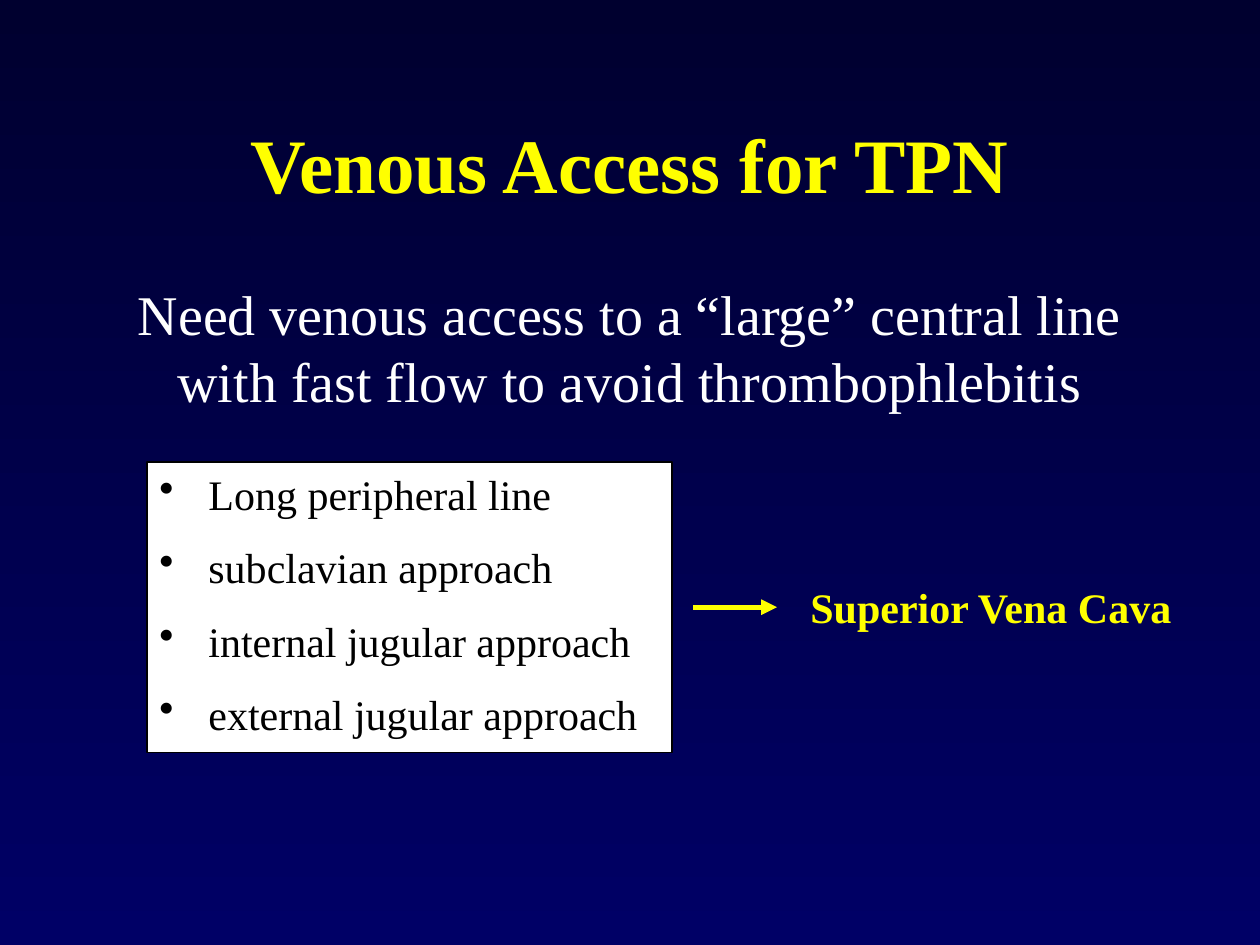
from dataclasses import dataclass

from lxml import etree
from pptx import Presentation
from pptx.dml.color import RGBColor
from pptx.enum.shapes import MSO_CONNECTOR as Connector, MSO_SHAPE as Shape
from pptx.enum.text import MSO_ANCHOR as Anchor, MSO_AUTO_SIZE as AutoSize, PP_ALIGN as Align
from pptx.oxml.ns import qn
from pptx.util import Pt


@dataclass(frozen=True)
class Theme:
    font: str = "Times New Roman"
    accent: str = "FFFF00"
    light: str = "FFFFFF"
    dark: str = "000000"
    background_top: str = "00002F"
    background_bottom: str = "000066"
    title_size: float = 44
    body_size: float = 32
    label_size: float = 24
    item_gap: float = 13.2
    bullet_indent: float = 28


def color(value):
    return RGBColor.from_string(value)


class SlideBuilder:
    def __init__(self, presentation, theme):
        self.theme = theme
        # Layout 5 is "Title Only"
        self.slide = presentation.slides.add_slide(presentation.slide_layouts[5])

    def background(self):
        fill = self.slide.background.fill
        fill.gradient()
        fill.gradient_angle = 270
        shades = (self.theme.background_top, self.theme.background_bottom)
        for stop, shade in zip(fill.gradient_stops, shades):
            stop.color.rgb = color(shade)

    def set_text(self, shape, lines, size, ink, bold=False, align=Align.LEFT, anchor=Anchor.TOP):
        frame = shape.text_frame
        frame.text = "\n".join(lines)
        frame.word_wrap = True
        frame.auto_size = AutoSize.NONE
        frame.vertical_anchor = anchor
        for paragraph in frame.paragraphs:
            paragraph.alignment = align
            font = paragraph.font
            font.name, font.size, font.bold = self.theme.font, Pt(size), bold
            font.color.rgb = color(ink)
        return frame

    def title(self, text, left, top, width, height):
        shape = self.slide.shapes.title
        shape.left, shape.top, shape.width, shape.height = map(Pt, (left, top, width, height))
        self.set_text(shape, [text], self.theme.title_size, self.theme.accent,
                      bold=True, align=Align.CENTER, anchor=Anchor.MIDDLE)

    def text(self, text, left, top, width, height, size, ink, **style):
        box = self.slide.shapes.add_textbox(*map(Pt, (left, top, width, height)))
        self.set_text(box, [text], size, ink, **style)

    def bullet_panel(self, items, left, top, width, height):
        theme = self.theme
        panel = self.slide.shapes.add_shape(
            Shape.RECTANGLE, *map(Pt, (left, top, width, height)))
        panel.shadow.inherit = False
        panel.fill.solid()
        panel.fill.fore_color.rgb = color(theme.light)
        panel.line.color.rgb = color(theme.dark)
        panel.line.width = Pt(0.75)
        frame = self.set_text(panel, items, theme.label_size, theme.dark)
        for index, paragraph in enumerate(frame.paragraphs):
            paragraph.space_before = Pt(theme.item_gap if index else 0)
            # Hanging bullet
            properties = paragraph._p.get_or_add_pPr()
            properties.set("marL", str(Pt(theme.bullet_indent)))
            properties.set("indent", str(-Pt(theme.bullet_indent)))
            bullet = etree.Element(qn("a:buChar"), char="•")
            properties.find(qn("a:defRPr")).addprevious(bullet)

    def arrow(self, start, end, y):
        connector = self.slide.shapes.add_connector(
            Connector.STRAIGHT, Pt(start), Pt(y), Pt(end), Pt(y))
        connector.line.color.rgb = color(self.theme.accent)
        connector.line.width = Pt(3)
        # Arrowhead, and no shadow
        properties = connector._element.spPr
        etree.SubElement(properties.find(qn("a:ln")), qn("a:tailEnd"), type="triangle")
        etree.SubElement(properties, qn("a:effectLst"))


def main():
    presentation = Presentation()
    presentation.slide_width, presentation.slide_height = Pt(720), Pt(540)
    theme = Theme()
    builder = SlideBuilder(presentation, theme)

    # Heading and statement
    builder.background()
    builder.title("Venous Access for TPN", 54, 48, 612, 90)
    builder.text(
        "Need venous access to a “large” central line with fast flow to avoid thrombophlebitis",
        54, 156, 612, 102, theme.body_size, theme.light, align=Align.CENTER)

    # Access routes leading to the target vein
    builder.bullet_panel(
        ["Long peripheral line", "subclavian approach",
         "internal jugular approach", "external jugular approach"],
        84, 264, 300, 166)
    builder.arrow(396, 444, 347)
    builder.text("Superior Vena Cava", 456, 329, 228, 36,
                 theme.label_size, theme.accent, bold=True)

    presentation.save("out.pptx")


if __name__ == "__main__":
    main()
